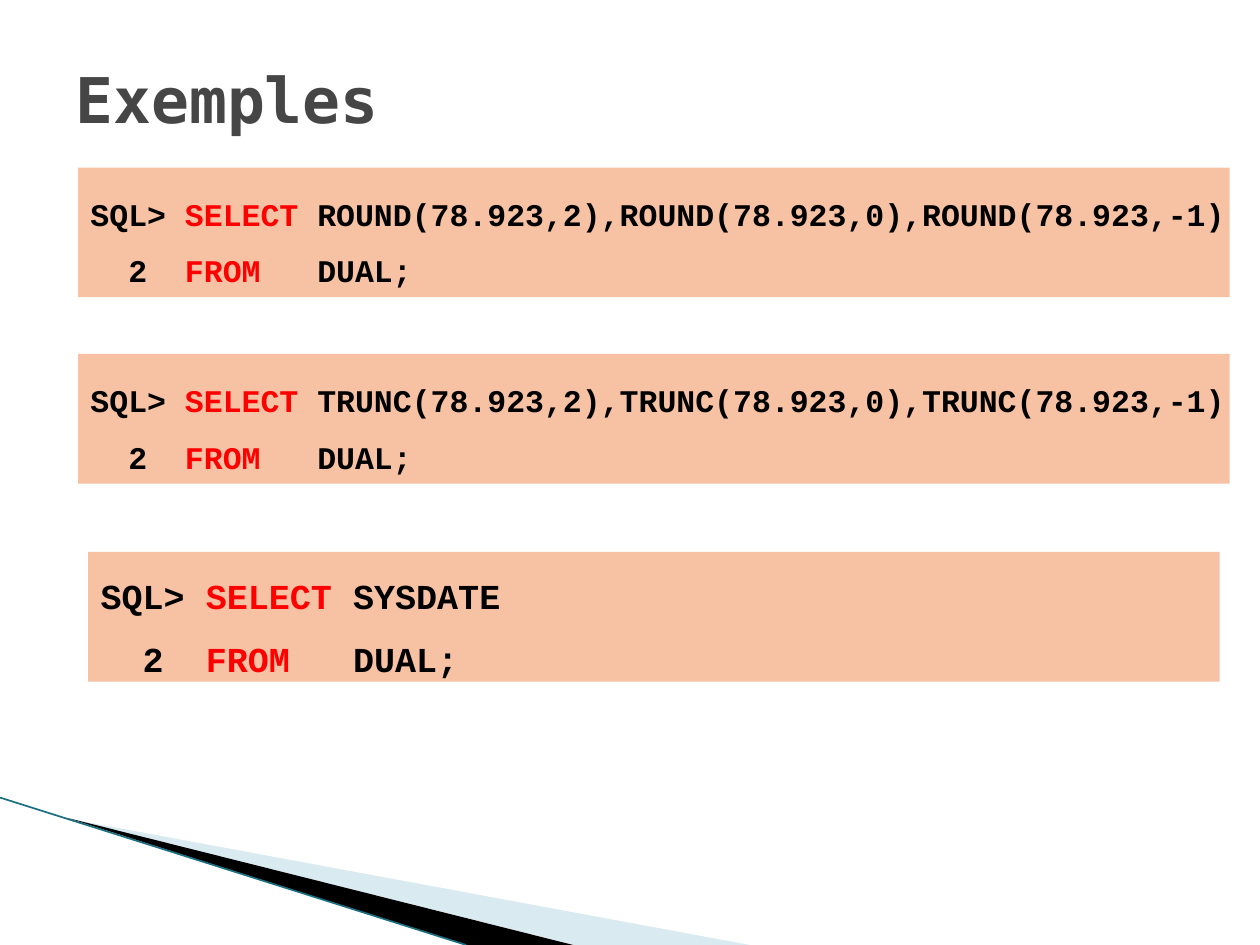
from dataclasses import dataclass

from lxml.etree import SubElement
from pptx import Presentation
from pptx.dml.color import RGBColor as RGB
from pptx.enum.shapes import MSO_CONNECTOR as Connector, MSO_SHAPE as Shape
from pptx.enum.text import MSO_ANCHOR as Anchor, PP_ALIGN as Align
from pptx.oxml.ns import qn
from pptx.util import Inches, Pt

WIDTH, HEIGHT = 10, 7.5


@dataclass(frozen=True)
class Theme:
    """Colours, fonts and type sizes of the slide."""
    heading: str = "464646"
    code: str = "000000"
    keyword: str = "FF0000"
    panel: str = "F7C1A4"
    pale: str = "A0CBDC"
    dark: str = "000000"
    edge: str = "1A6F80"
    heading_font: str = "DejaVu Sans Mono"
    code_font: str = "Courier New"
    heading_size: int = 36
    long_size: int = 18
    short_size: int = 20


class SlideBuilder:
    """Draws themed elements placed by shares of the slide's size."""

    def __init__(self, slide, theme):
        self.shapes, self.theme = slide.shapes, theme

    def place(self, x, y):
        return Inches(x * WIDTH), Inches(y * HEIGHT)

    def frame(self, shape, **margins):
        text = shape.text_frame
        layout = {"word_wrap": True, "vertical_anchor": Anchor.MIDDLE, **margins}
        for name, value in layout.items():
            setattr(text, name, value)
        return text

    def add_words(self, paragraph, text, family, size, color):
        run = paragraph.add_run()
        run.text = text
        for name, value in {"name": family, "size": Pt(size), "bold": True}.items():
            setattr(run.font, name, value)
        run.font.color.rgb = RGB.from_string(color)

    def title(self, text, x, y, w, h):
        box = self.shapes.add_textbox(*self.place(x, y), *self.place(w, h))
        style = self.theme
        self.add_words(self.frame(box).paragraphs[0], text,
                       style.heading_font, style.heading_size, style.heading)

    def query(self, expression, size, x, y, w, h):
        panel = self.shapes.add_shape(Shape.RECTANGLE, *self.place(x, y), *self.place(w, h))
        self.paint(panel, self.theme.panel)
        text = self.frame(panel, margin_right=0)
        lines = (("SQL> ", "SELECT ", expression), ("  2  ", "FROM   ", "DUAL;"))
        for index, line in enumerate(lines):
            paragraph = text.add_paragraph() if index else text.paragraphs[0]
            paragraph.alignment, paragraph.line_spacing = Align.LEFT, 1.5
            colors = self.theme.code, self.theme.keyword, self.theme.code
            for part, color in zip(line, colors):
                self.add_words(paragraph, part, self.theme.code_font, size, color)

    def paint(self, shape, color, opacity=1):
        shape.shadow.inherit = False
        shape.line.fill.background()
        shape.fill.solid()
        shape.fill.fore_color.rgb = RGB.from_string(color)
        if opacity < 1:
            tint = shape._element.spPr.find(qn("a:solidFill"))[0]
            SubElement(tint, qn("a:alpha"), val=str(int(opacity * 100000)))

    def wedge(self, points, color, opacity=1):
        start, *rest = [self.place(*point) for point in points]
        outline = self.shapes.build_freeform(*start)
        outline.add_line_segments(rest, close=True)
        self.paint(outline.convert_to_shape(), color, opacity)

    def edge(self, start, end):
        line = self.shapes.add_connector(
            Connector.STRAIGHT, *self.place(*start), *self.place(*end))
        line.line.width = Pt(0.95)
        line.line.color.rgb = RGB.from_string(self.theme.edge)
        SubElement(line._element.spPr, qn("a:effectLst"))


def main():
    deck = Presentation()
    deck.slide_width, deck.slide_height = Inches(WIDTH), Inches(HEIGHT)
    theme = Theme()
    builder = SlideBuilder(deck.slides.add_slide(deck.slide_layouts[6]), theme)

    tip = 0.055, 6.5 / HEIGHT
    builder.wedge([tip, (0.595, 1), (0.456, 1)], theme.pale, 0.4)
    builder.wedge([(0.053, 6.49 / HEIGHT), (0.455, 1), (0.37, 1)], theme.dark)
    builder.edge((0, 6.33 / HEIGHT), (0.37, 1))

    builder.title("Exemples", 0.05, 0.04, 0.9, 0.127)
    panel_height = 1.03 / HEIGHT
    for row, function in enumerate(("ROUND", "TRUNC")):
        calls = ",".join(f"{function}(78.923,{digits})" for digits in (2, 0, -1))
        top = (1.33 + 1.48 * row) / HEIGHT
        builder.query(calls, theme.long_size, 0.062, top, 0.914, panel_height)
    builder.query("SYSDATE", theme.short_size, 0.07, 4.38 / HEIGHT, 0.898, panel_height)

    deck.save("out.pptx")


if __name__ == "__main__":
    main()
